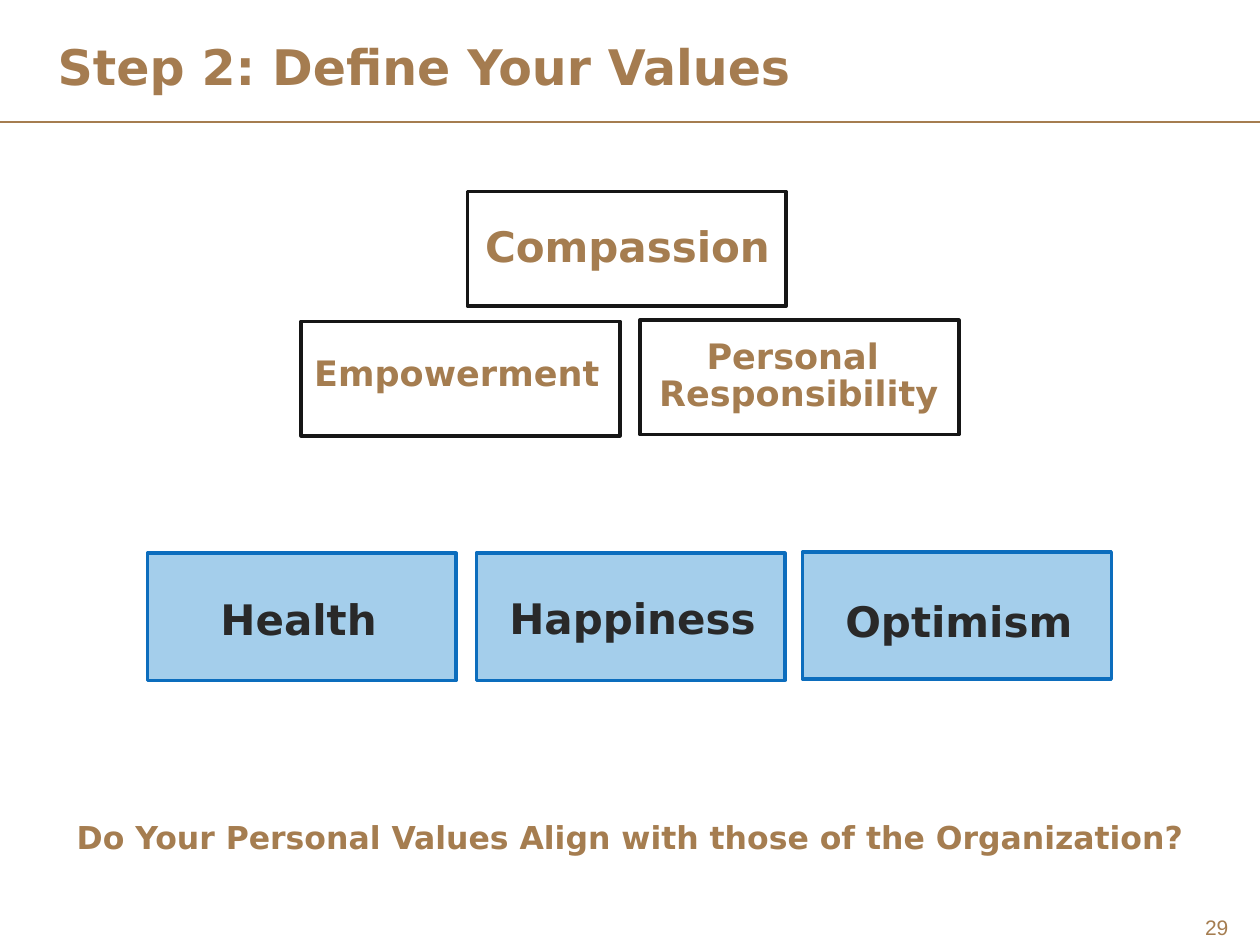
from lxml.etree import SubElement
from pptx import Presentation
from pptx.dml.color import RGBColor
from pptx.enum.shapes import MSO_CONNECTOR as Conn, MSO_SHAPE as Shape
from pptx.enum.text import MSO_ANCHOR as Anchor, MSO_AUTO_SIZE as Fit, PP_ALIGN as Align
from pptx.oxml.ns import qn
from pptx.util import Inches, Pt

COLS, ROWS = 100, 75
BROWN, INK, DARK = "A57D50", "161616", "292929"
SKY, BLUE = "A4CEEB", "0C6DBD"


def rgb(color):
    return RGBColor.from_string(color)


class Deck:
    """Holds the style and the current slide; lengths are grid columns and rows."""

    font = "DejaVu Sans"

    def __init__(self, prs):
        self.col, self.row = prs.slide_width / COLS, prs.slide_height / ROWS
        self.s = prs.slides.add_slide(prs.slide_layouts[6])

    def grid(self, x, y, w, h):
        return [round(v * u) for v, u in zip((x, y, w, h), (self.col, self.row) * 2)]

    def rule(self, y, color, width=1):
        x1, y1, x2, _ = self.grid(0, y, COLS, 0)
        sp = self.s.shapes.add_connector(Conn.STRAIGHT, x1, y1, x2, y1)
        sp.line.color.rgb, sp.line.width = rgb(color), Pt(width)
        SubElement(sp._element.spPr, qn("a:effectLst"))

    def box(self, at, line, fill=None):
        sp = self.s.shapes.add_shape(Shape.RECTANGLE, *self.grid(*at))
        sp.shadow.inherit = False
        sp.line.color.rgb, sp.line.width = rgb(line), Pt(2)
        if fill:
            sp.fill.solid()
            sp.fill.fore_color.rgb = rgb(fill)
        else:
            sp.fill.background()

    def text(self, at, lines, size, color=BROWN, align=Align.CENTER, wrap=False,
             inset=None, spacing=0.9, **font):
        tf = self.s.shapes.add_textbox(*self.grid(*at)).text_frame
        frame = {"word_wrap": wrap, "vertical_anchor": Anchor.TOP,
                 "auto_size": Fit.NONE if wrap else Fit.SHAPE_TO_FIT_TEXT}
        if inset is not None:
            frame |= {f"margin_{side}": inset for side in ("left", "top", "right", "bottom")}
        for name, value in frame.items():
            setattr(tf, name, value)
        style = {"name": self.font, "size": Pt(size), "bold": True} | font
        for i, line in enumerate(lines):
            p = tf.add_paragraph() if i else tf.paragraphs[0]
            p.alignment, p.line_spacing = align, spacing
            r = p.add_run()
            r.text = line
            for name, value in style.items():
                setattr(r.font, name, value)
            r.font.color.rgb = rgb(color)


def main():
    prs = Presentation()
    prs.slide_width, prs.slide_height = Inches(10), Inches(7.5)
    deck = Deck(prs)

    # Header rule, page number and title
    deck.rule(9.7, BROWN)
    deck.text((92.9, 72.6, 4.6, 1.5), ["29"], 12, align=Align.RIGHT, wrap=True,
              inset=0, spacing=1.0, name="Arial", bold=False)
    deck.text((3.6, 2.9, 85.9, 8.4), ["Step 2: Define Your Values"], 28, "A57C50",
              align=Align.LEFT, wrap=True)

    # Organization values: box corner, label place, label lines, size
    organization = [
        ((37.1, 15.2), (37.4, 17.5, 24.8, 4.6), ["Compassion"], 24),
        ((23.9, 25.5), (23.8, 27.8, 24.9, 4.0), ["Empowerment"], 20),
        ((50.8, 25.4), (51.3, 26.4, 24.2, 7.1), ["Personal ", "Responsibility"], 20),
    ]
    for corner, place, lines, size in organization:
        deck.box((*corner, 25.3, 9.1), INK)
        deck.text(place, lines, size)

    # Personal values: box corner, label place, label
    personal = [
        ((11.7, 43.9), (16.5, 47.1, 14.4, 4.6), "Health"),
        ((37.8, 43.9), (39.4, 47.0, 21.6, 4.6), "Happiness"),
        ((63.7, 43.8), (66.0, 47.2, 20.2, 4.6), "Optimism"),
    ]
    for corner, place, label in personal:
        deck.box((*corner, 24.5, 10.1), BLUE, SKY)
        deck.text(place, [label], 24, DARK)

    # Closing question
    deck.text((5.1, 64.8, 89.9, 3.7),
              ["Do Your Personal Values Align with those of the Organization?"], 18,
              align=Align.LEFT)

    prs.save("out.pptx")


if __name__ == "__main__":
    main()
